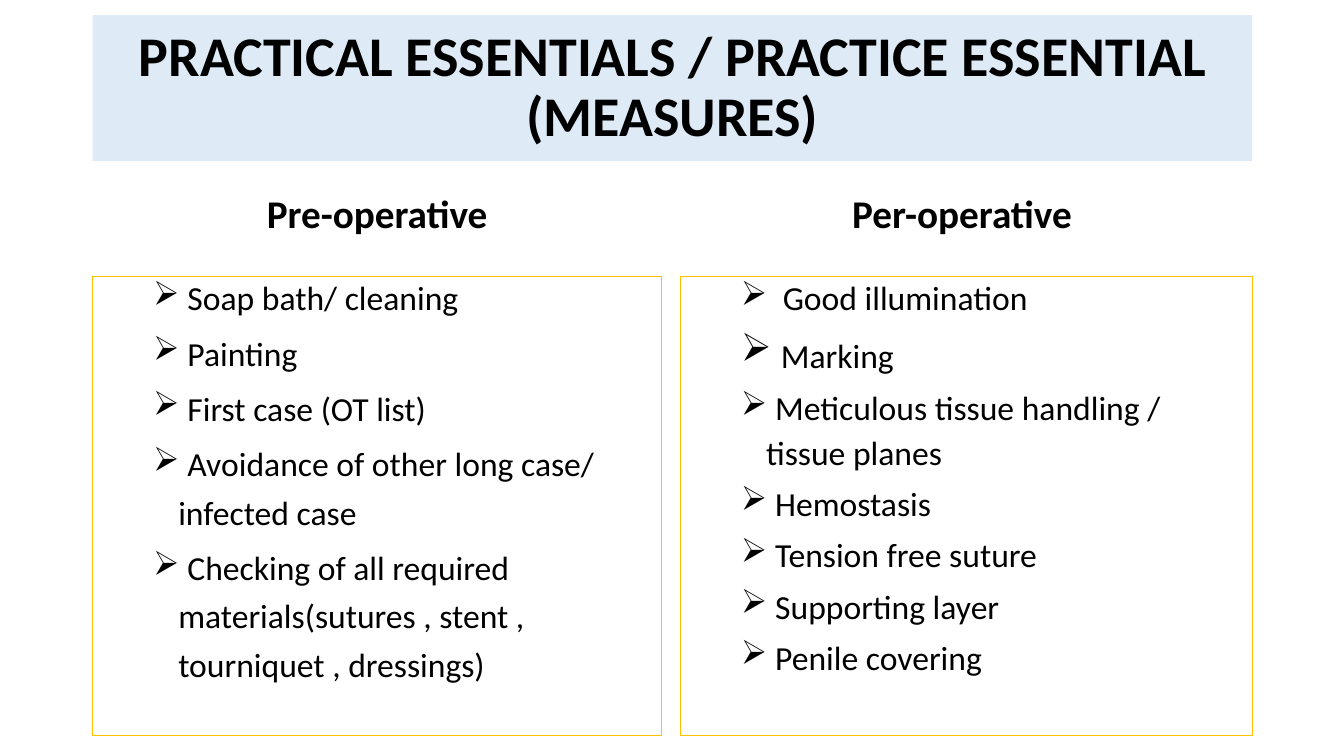
from lxml import etree
from pptx import Presentation
from pptx import util as u
from pptx.dml.color import RGBColor
from pptx.enum import shapes, text
from pptx.oxml.ns import qn

FONT = "Calibri"


def color(hex_value):
    return RGBColor.from_string(hex_value)


def write(paragraph, content, size=24, bold=False, align=text.PP_ALIGN.LEFT,
          spacing=0.9, before=0, bullet=None, margin=0, indent=0):
    """Fill a paragraph; content is a list of lines or of (text, size) runs."""
    paragraph.alignment = align
    paragraph.line_spacing = spacing
    paragraph.space_before = u.Pt(before)
    if bullet:
        properties = paragraph._p.get_or_add_pPr()
        properties.set("marL", str(u.Inches(margin)))
        properties.set("indent", str(u.Inches(indent)))
        etree.SubElement(properties, qn("a:buChar")).set("char", bullet)
    for number, part in enumerate(content):
        if isinstance(part, str):
            if number:
                paragraph.add_line_break()
            part = (part, size)
        run = paragraph.add_run()
        run.text = part[0]
        run.font.name = FONT
        run.font.size = u.Pt(part[1])
        run.font.bold = bold
        run.font.color.rgb = color("000000")


presentation = Presentation()
presentation.slide_width = u.Inches(13.33)
presentation.slide_height = u.Inches(7.5)
slide = presentation.slides.add_slide(presentation.slide_layouts[6])

# Title band
title = slide.shapes.add_shape(
    shapes.MSO_SHAPE.RECTANGLE,
    u.Inches(0.92), u.Inches(0.15), u.Inches(11.5), u.Inches(1.45))
title.shadow.inherit = False
title.fill.solid()
title.fill.fore_color.rgb = color("DEEBF7")
title.line.fill.background()
title.text_frame.word_wrap = True
title.text_frame.vertical_anchor = text.MSO_ANCHOR.MIDDLE
write(title.text_frame.paragraphs[0],
      ["PRACTICAL ESSENTIALS / PRACTICE ESSENTIAL", "(MEASURES)"],
      size=40, bold=True, align=text.PP_ALIGN.CENTER)

# Columns: left, width, line spacing, heading, items
columns = [
    (0.92, 5.64, 1.2, "Pre-operative", [
        [" Soap bath/ cleaning"],
        [" Painting"],
        [" First case (OT list)"],
        [" Avoidance of other long case/ infected case"],
        [" Checking of all required materials(sutures , stent , tourniquet , dressings)"],
    ]),
    (6.75, 5.67, 1.1, "Per-operative ", [
        ["  Good illumination"],
        [(" ", 28), ("Marking", 24)],
        [" Meticulous tissue handling / tissue planes"],
        [" Hemostasis"],
        [" Tension free suture"],
        [" Supporting layer"],
        [" Penile covering"],
    ]),
]

for left, width, spacing, heading_text, items in columns:
    # Column heading
    heading = slide.shapes.add_textbox(
        u.Inches(left), u.Inches(1.84), u.Inches(width), u.Inches(0.9))
    heading.text_frame.word_wrap = True
    heading.text_frame.vertical_anchor = text.MSO_ANCHOR.BOTTOM
    heading.text_frame.margin_bottom = u.Inches(0.39)
    write(heading.text_frame.paragraphs[0], [heading_text],
          size=28, bold=True, align=text.PP_ALIGN.CENTER)

    # Outlined list of measures
    measures = slide.shapes.add_shape(
        shapes.MSO_SHAPE.RECTANGLE,
        u.Inches(left), u.Inches(2.74), u.Inches(width), u.Inches(4.56))
    measures.shadow.inherit = False
    measures.fill.background()
    measures.line.color.rgb = color("FFC000")
    measures.line.width = u.Pt(0.75)
    frame = measures.text_frame
    frame.word_wrap = True
    frame.vertical_anchor = text.MSO_ANCHOR.TOP
    for number, item in enumerate(items):
        if number == 0:
            write(frame.paragraphs[0], item, bullet="➢", margin=0.5)
        else:
            write(frame.add_paragraph(), item, spacing=spacing, before=5,
                  bullet="➢", margin=0.75, indent=-0.25)

presentation.save("out.pptx")
